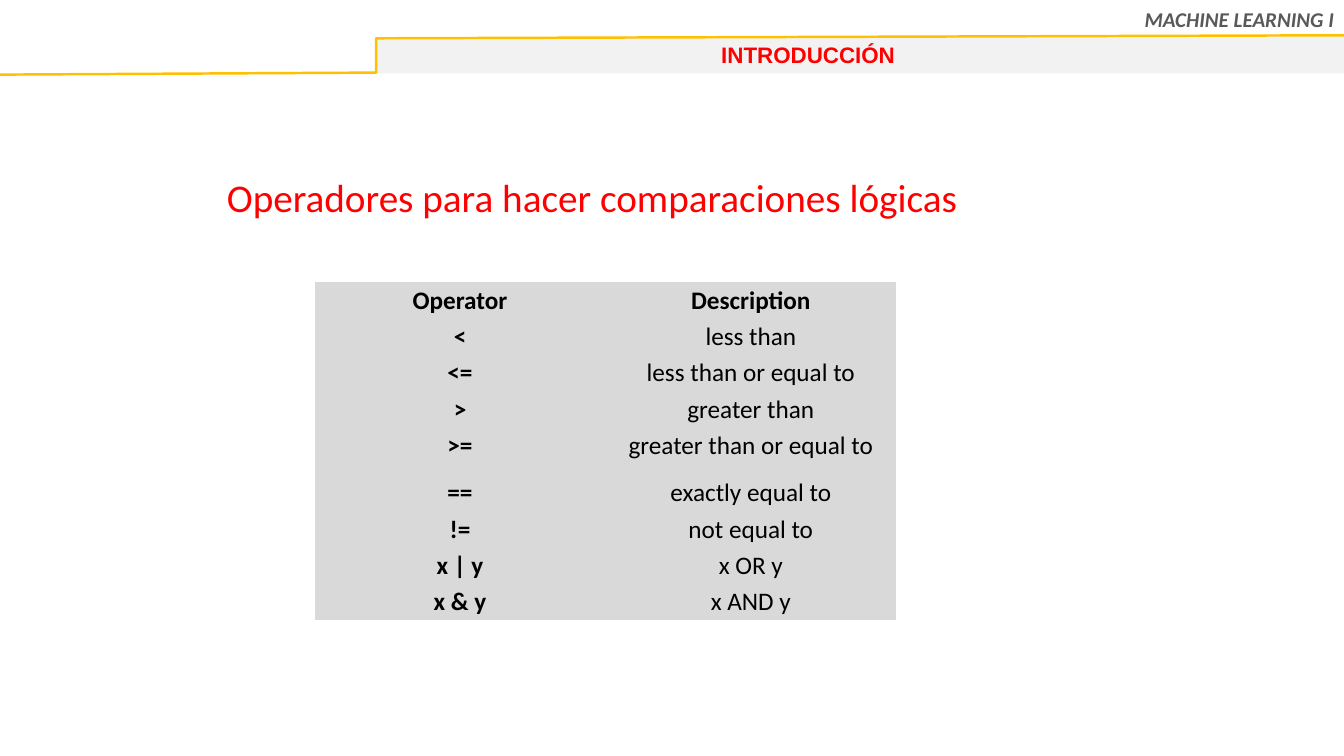
from lxml.etree import Element
from pptx import Presentation
from pptx.dml.color import RGBColor
from pptx.enum.shapes import MSO_SHAPE
from pptx.enum.text import MSO_ANCHOR, MSO_AUTO_SIZE, PP_ALIGN
from pptx.oxml.ns import qn
from pptx.util import Inches, Pt

RED = RGBColor(0xFF, 0x00, 0x00)
GOLD = RGBColor(0xFF, 0xC0, 0x00)
BLACK = RGBColor(0x00, 0x00, 0x00)
DARK = RGBColor(0x59, 0x59, 0x59)
GREY = RGBColor(0xD9, 0xD9, 0xD9)
PALE = RGBColor(0xF2, 0xF2, 0xF2)

ROWS = [
    ("Operator", "Description"),
    ("<", "less than"),
    ("<=", "less than or equal to"),
    (">", "greater than"),
    (">=", "greater than or equal to"),
    ("==", "exactly equal to"),
    ("!=", "not equal to"),
    ("x | y", "x OR y"),
    ("x & y", "x AND y"),
]
STEP = [(13.33, 0.35), (3.73, 0.38), (3.73, 0.72), (0, 0.74)]


class Deck:
    def __init__(self, font="Calibri"):
        self.font = font
        self.prs = Presentation()
        self.prs.slide_width = Inches(13.33)
        self.prs.slide_height = Inches(7.5)
        self.slide = self.prs.slides.add_slide(self.prs.slide_layouts[5])
        self.shapes = self.slide.shapes

    def fill_in(self, frame, text, size, color, align, bold=False,
                italic=False, font=None):
        """Put one formatted run in the first paragraph of a frame."""
        para = frame.paragraphs[0]
        para.alignment = align
        run = para.add_run()
        run.text = text
        run.font.name = font or self.font
        run.font.size = Pt(size)
        run.font.bold = bold
        run.font.italic = italic
        run.font.color.rgb = color

    def title(self, box, text, size, color):
        head = self.shapes.title
        head.left, head.top, head.width, head.height = map(Inches, box)
        frame = head.text_frame
        frame.word_wrap = True
        frame.auto_size = MSO_AUTO_SIZE.NONE
        frame.vertical_anchor = MSO_ANCHOR.TOP
        self.fill_in(frame, text, size, color, PP_ALIGN.LEFT)

    def text(self, box, text, size, color, align, **style):
        frame = self.shapes.add_textbox(*map(Inches, box)).text_frame
        frame.word_wrap = True
        self.fill_in(frame, text, size, color, align, **style)

    def band(self, box, color):
        rect = self.shapes.add_shape(MSO_SHAPE.RECTANGLE, *map(Inches, box))
        rect.shadow.inherit = False
        rect.fill.solid()
        rect.fill.fore_color.rgb = color
        rect.line.fill.background()

    def trace(self, points, color, width):
        """Draw an open line through the points."""
        spots = [(Inches(x), Inches(y)) for x, y in points]
        pen = self.shapes.build_freeform(*spots[0])
        pen.add_line_segments(spots[1:], close=False)
        edge = pen.convert_to_shape()
        edge.shadow.inherit = False
        edge.fill.background()
        edge.line.color.rgb = color
        edge.line.width = Pt(width)

    def table(self, box, rows, heights, fill, size):
        """Draw a plain table whose header row and first column are bold."""
        grid = self.shapes.add_table(
            len(rows), len(rows[0]), *map(Inches, box)).table
        for r, row in enumerate(rows):
            grid.rows[r].height = Inches(heights[r])
            for c, text in enumerate(row):
                cell = grid.cell(r, c)
                cell.margin_left = cell.margin_right = Inches(0.03)
                cell.margin_top = cell.margin_bottom = Inches(0.03)
                cell.fill.solid()
                cell.fill.fore_color.rgb = fill
                self.clear(cell)
                self.fill_in(cell.text_frame, text, size, BLACK,
                             PP_ALIGN.CENTER, bold=r == 0 or c == 0)

    def clear(self, cell):
        """Remove the four borders of a cell."""
        props = cell._tc.get_or_add_tcPr()
        for i, side in enumerate("LRTB"):
            edge = Element(qn("a:ln" + side), w="0")
            edge.append(Element(qn("a:noFill")))
            props.insert(i, edge)


def main():
    deck = Deck()
    deck.band((3.73, 0.37, 9.6, 0.36), PALE)
    deck.trace(STEP, GOLD, 1.75)
    deck.text((7.82, 0.02, 5.51, 0.35), "MACHINE LEARNING I", 15, DARK,
              PP_ALIGN.RIGHT, bold=True, italic=True)
    deck.text((4.46, 0.36, 7.11, 0.37), "INTRODUCCIÓN", 16, RED,
              PP_ALIGN.CENTER, bold=True, font="Arial")
    deck.title((2.15, 1.67, 8.54, 0.57),
               "Operadores para hacer comparaciones lógicas", 28, RED)
    heights = [0.47 if row[0] == ">=" else 0.36 for row in ROWS]
    deck.table((3.12, 2.8, 5.77, 3.37), ROWS, heights, GREY, 18)
    deck.prs.save("out.pptx")


if __name__ == "__main__":
    main()
